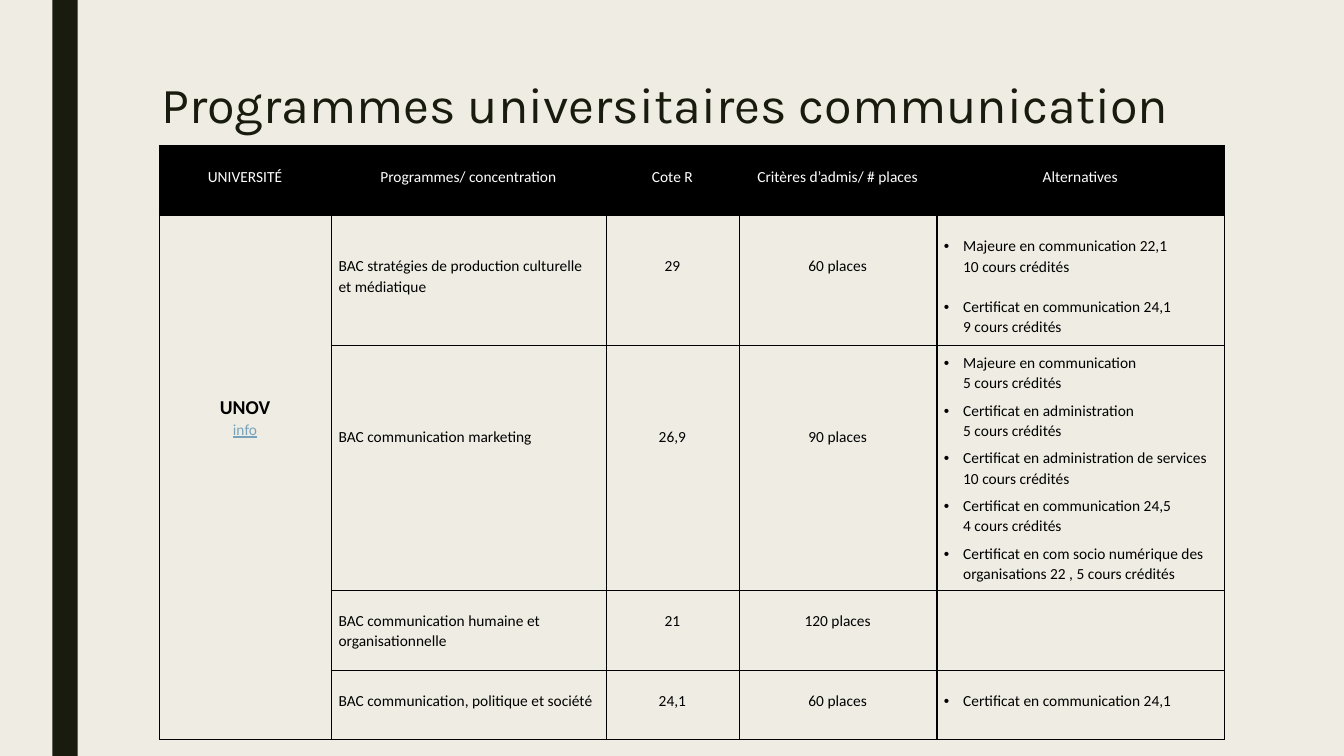
from dataclasses import dataclass

from lxml.etree import SubElement
from pptx import Presentation
from pptx.dml.color import RGBColor
from pptx.enum.shapes import MSO_SHAPE
from pptx.enum.text import MSO_ANCHOR, PP_ALIGN
from pptx.oxml.ns import qn
from pptx.util import Inches, Pt


@dataclass(frozen=True)
class Theme:
    background: str = "EFEDE3"
    dark: str = "191B0E"
    black: str = "000000"
    white: str = "FFFFFF"
    link: str = "77A2BB"
    title_font: str = "Karla"
    body_font: str = "Calibri"
    title_size: int = 36
    name_size: int = 14
    body_size: int = 11
    line_height: float = 0.2
    bullet_indent: float = 0.19


def write_text(paragraph, text, *, font, size, color, bold=False, underline=False,
               align=PP_ALIGN.LEFT, spacing=1.07, before=0, indent=0, bullet=False):
    paragraph.alignment = align
    paragraph.line_spacing = spacing
    paragraph.space_before = Pt(before)
    paragraph.space_after = Pt(0)
    properties = paragraph._p.get_or_add_pPr()
    properties.set("marL", str(Inches(indent)))
    properties.set("indent", str(-Inches(indent) if bullet else 0))
    if bullet:
        SubElement(properties, qn("a:buFont")).set("typeface", "Arial")
        SubElement(properties, qn("a:buChar")).set("char", "•")
    else:
        SubElement(properties, qn("a:buNone"))
    run = paragraph.add_run()
    run.text = text
    run.font.name = font
    run.font.size = Pt(size)
    run.font.bold = bold
    run.font.underline = underline
    run.font.color.rgb = RGBColor.from_string(color)


class SlideBuilder:
    def __init__(self, presentation, theme):
        self.theme = theme
        self.width = presentation.slide_width
        self.height = presentation.slide_height
        self.slide = presentation.slides.add_slide(presentation.slide_layouts[6])
        fill = self.slide.background.fill
        fill.solid()
        fill.fore_color.rgb = RGBColor.from_string(theme.background)

    def across(self, percent):
        return round(self.width * percent / 100)

    def down(self, percent):
        return round(self.height * percent / 100)

    def box(self, left, top, width, height):
        return self.across(left), self.down(top), self.across(width), self.down(height)

    def bar(self, *place):
        shape = self.slide.shapes.add_shape(MSO_SHAPE.RECTANGLE, *self.box(*place))
        shape.shadow.inherit = False
        shape.fill.solid()
        shape.fill.fore_color.rgb = RGBColor.from_string(self.theme.dark)
        shape.line.fill.background()

    def title(self, text, *place):
        frame = self.slide.shapes.add_textbox(*self.box(*place)).text_frame
        frame.word_wrap = True
        frame.vertical_anchor = MSO_ANCHOR.TOP
        write_text(frame.paragraphs[0], text, font=self.theme.title_font,
                   size=self.theme.title_size, color=self.theme.dark, spacing=0.89)

    def table(self, left, top, column_widths, row_heights):
        place = self.box(left, top, sum(column_widths), sum(row_heights))
        table = self.slide.shapes.add_table(len(row_heights), len(column_widths), *place).table
        table.first_row = table.horz_banding = False
        for column, width in zip(table.columns, column_widths):
            column.width = self.across(width)
        for row, height in zip(table.rows, row_heights):
            row.height = self.down(height)
        for cell in table.iter_cells():
            self.style_cell(cell)
        return table

    def style_cell(self, cell):
        cell.margin_left = Inches(0.07)
        cell.margin_right = Inches(0.08)
        cell.margin_top = cell.margin_bottom = 0
        properties = cell._tc.get_or_add_tcPr()
        for side in ("a:lnL", "a:lnR", "a:lnT", "a:lnB"):
            line = SubElement(properties, qn(side), w=str(Pt(1)))
            SubElement(SubElement(line, qn("a:solidFill")), qn("a:srgbClr"), val=self.theme.black)
        cell.fill.background()

    def cell_text(self, cell, entries, lines_above, **shared):
        cell.margin_top = Inches(lines_above * self.theme.line_height)
        base = dict(font=self.theme.body_font, size=self.theme.body_size, color=self.theme.black)
        for number, (text, own) in enumerate(entries):
            frame = cell.text_frame
            paragraph = frame.add_paragraph() if number else frame.paragraphs[0]
            write_text(paragraph, text, **{**base, **shared, **own})

    def header(self, cell, text):
        cell.fill.solid()
        cell.fill.fore_color.rgb = RGBColor.from_string(self.theme.black)
        self.cell_text(cell, [(text, {})], 1, color=self.theme.white, align=PP_ALIGN.CENTER)

    def alternatives(self, cell, groups, lines_above, gap):
        entries = []
        for number, (course, *details) in enumerate(groups):
            entries.append((course, dict(bullet=True, before=gap if number else 0)))
            entries += [(detail, {}) for detail in details]
        self.cell_text(cell, entries, lines_above, indent=self.theme.bullet_indent)


HEADERS = ["UNIVERSITÉ", "Programmes/ concentration", "Cote R",
           "Critères d’admis/ # places", "Alternatives"]
PROGRAMMES = [
    ("BAC stratégies de production culturelle et médiatique", "29", "60 places", 2),
    ("BAC communication marketing", "26,9", "90 places", 4),
    ("BAC communication humaine et organisationnelle", "21", "120 places", 1),
    ("BAC communication, politique et société", "24,1", "60 places", 1),
]
ALTERNATIVES = {
    1: (1, 14.5, [("Majeure en communication 22,1", "10 cours crédités"),
                  ("Certificat en communication 24,1", "9 cours crédités")]),
    2: (0.35, 5, [("Majeure en communication", "5 cours crédités"),
                  ("Certificat en administration", "5 cours crédités"),
                  ("Certificat en administration de services 10 cours crédités",),
                  ("Certificat en communication 24,5", "4 cours crédités"),
                  ("Certificat en com socio numérique des organisations 22 , 5 cours crédités",)]),
    4: (1, 0, [("Certificat en communication 24,1",)]),
}


def main():
    presentation = Presentation()
    presentation.slide_width = Inches(13.33)
    presentation.slide_height = Inches(7.5)
    theme = Theme()
    builder = SlideBuilder(presentation, theme)
    builder.bar(3.9, 0, 1.88, 100)
    builder.title("Programmes universitaires communication", 11.25, 10, 78.75, 12.27)

    table = builder.table(11.87, 19.3, [12.8, 20.45, 9.9, 14.7, 21.4], [9.2, 17.2, 32.4, 10.6, 9.1])
    for column, text in enumerate(HEADERS):
        builder.header(table.cell(0, column), text)

    university = table.cell(1, 0)
    university.merge(table.cell(4, 0))
    builder.cell_text(university, [("UNOV", dict(size=theme.name_size, bold=True)),
                                   ("info", dict(color=theme.link, underline=True))],
                      8.85, align=PP_ALIGN.CENTER)

    for row, (programme, score, places, lines_above) in enumerate(PROGRAMMES, 1):
        builder.cell_text(table.cell(row, 1), [(programme, {})], lines_above)
        for column, text in enumerate((score, places), 2):
            builder.cell_text(table.cell(row, column), [(text, {})], lines_above,
                              align=PP_ALIGN.CENTER)
    table.cell(1, 1).margin_right = Inches(0.12)
    for row, (lines_above, gap, groups) in ALTERNATIVES.items():
        builder.alternatives(table.cell(row, 4), groups, lines_above, gap)

    presentation.save("out.pptx")


if __name__ == "__main__":
    main()
